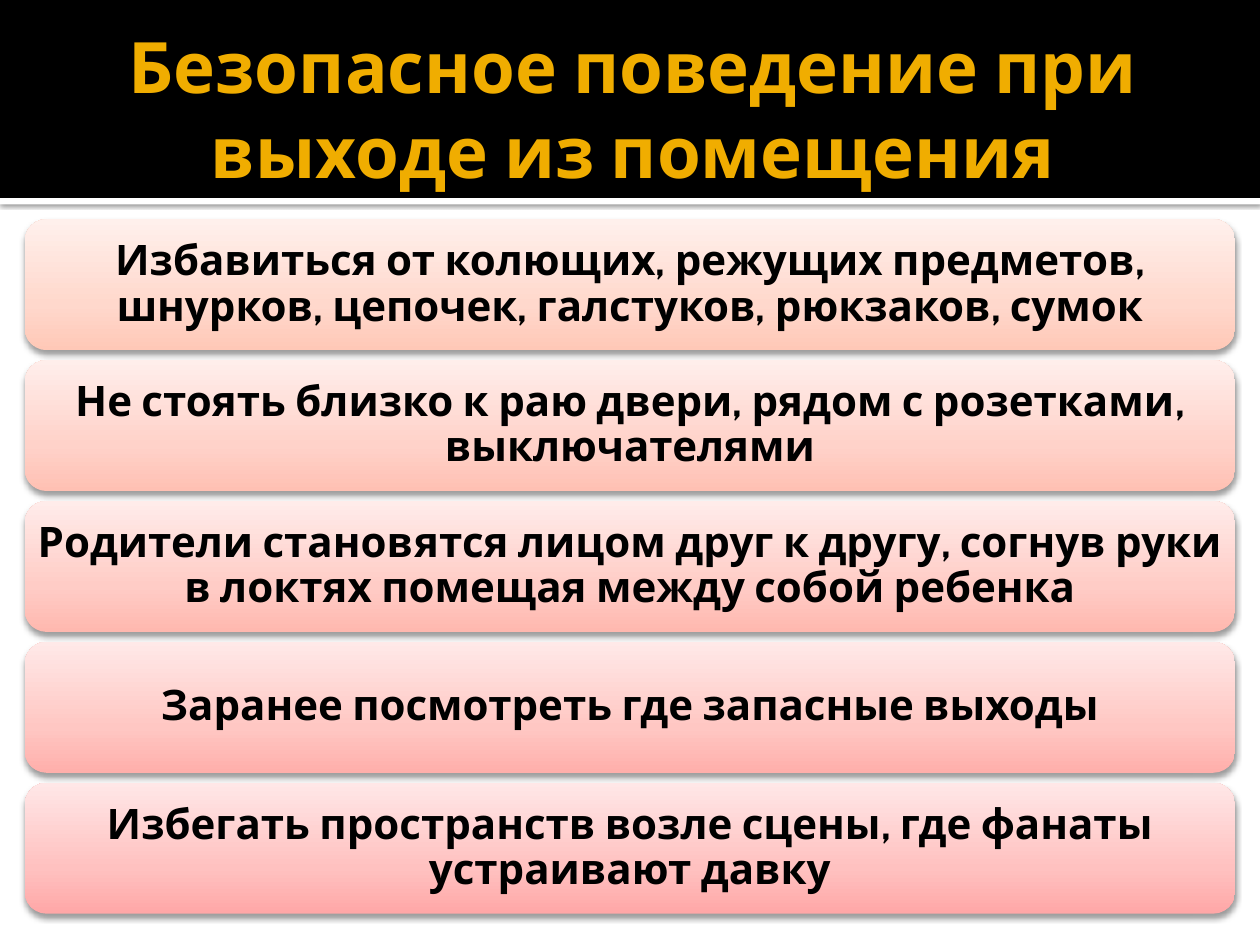
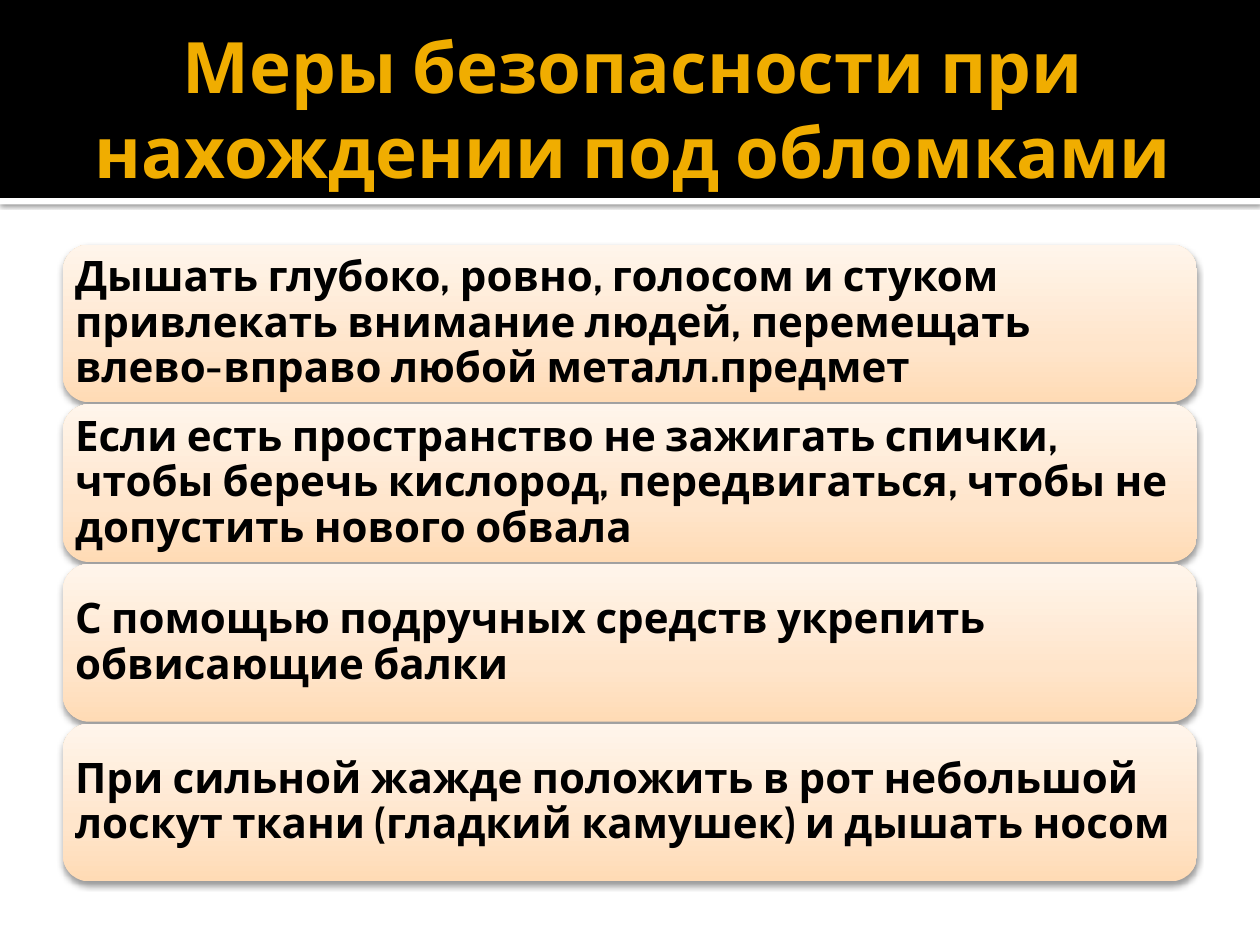
from copy import deepcopy

from lxml.etree import SubElement
from pptx import Presentation
from pptx.dml.color import RGBColor
from pptx.enum.shapes import MSO_SHAPE
from pptx.enum.text import MSO_ANCHOR, PP_ALIGN
from pptx.oxml.ns import qn
from pptx.util import Cm, Pt

BLACK = RGBColor(0x00, 0x00, 0x00)
WHITE = RGBColor(0xFF, 0xFF, 0xFF)
GOLD = RGBColor(0xF0, 0xAD, 0x00)
PEACH = (RGBColor(0xFF, 0xC8, 0xB7), RGBColor(0xFF, 0xD8, 0xCC), RGBColor(0xFF, 0xF0, 0xEC))
ROSE = (RGBColor(0xFF, 0xA7, 0xA7), RGBColor(0xFF, 0xC1, 0xC0), RGBColor(0xFF, 0xE7, 0xE7))
SAND = (RGBColor(0xFF, 0xDB, 0xB5), RGBColor(0xFF, 0xE5, 0xCB), RGBColor(0xFF, 0xF5, 0xEB))
STOPS = (0, 0.35, 1)
FONT = "Cabin"
WIDTH, HEIGHT = 25.4, 19.05
BAND_HEIGHT = 3.99

EXIT_RULES = [
    "Избавиться от колющих, режущих предметов, шнурков, цепочек, галстуков, рюкзаков, сумок",
    "Не стоять близко к раю двери, рядом с розетками, выключателями",
    "Родители становятся лицом друг к другу, согнув руки в локтях помещая между собой ребенка",
    "Заранее посмотреть где запасные выходы",
    "Избегать пространств возле сцены, где фанаты устраивают давку",
]
RUBBLE_RULES = [
    "Дышать глубоко, ровно, голосом и стуком привлекать внимание людей, "
    "перемещать влево-вправо любой металл.предмет",
    "Если есть пространство не зажигать спички, чтобы беречь кислород, "
    "передвигаться, чтобы не допустить нового обвала",
    "С помощью подручных средств укрепить обвисающие балки",
    "При сильной жажде положить в рот небольшой лоскут ткани (гладкий камушек) и дышать носом",
]


def write(sp, text, size=24, color=BLACK, align=PP_ALIGN.CENTER, spacing=None,
          insets=(0.25, 0.13, 0.13, 0.13)):
    tf = sp.text_frame
    tf.word_wrap = True
    tf.vertical_anchor = MSO_ANCHOR.MIDDLE
    tf.margin_left, tf.margin_top, tf.margin_right, tf.margin_bottom = map(Cm, insets)
    p = tf.paragraphs[0]
    p.alignment = align
    if spacing:
        p.line_spacing = spacing
    r = p.add_run()
    r.text = text
    r.font.name, r.font.size, r.font.bold = FONT, Pt(size), True
    r.font.color.rgb = color


def blend(start, end, t):
    return tuple(RGBColor(*(round(a + (b - a) * t) for a, b in zip(c, d)))
                 for c, d in zip(start, end))


class Deck:
    """Holds the shared style and the slide being built."""

    def __init__(self):
        self.prs = Presentation()
        self.prs.slide_width, self.prs.slide_height = Cm(WIDTH), Cm(HEIGHT)
        self.s = None

    def shape(self, kind, left, top, width, height):
        sp = self.s.shapes.add_shape(kind, Cm(left), Cm(top), Cm(width), Cm(height))
        sp.line.fill.background()
        sp.shadow.inherit = False
        return sp

    def band(self, top, height, color):
        sp = self.shape(MSO_SHAPE.RECTANGLE, 0, top, WIDTH, height)
        sp.fill.solid()
        sp.fill.fore_color.rgb = color
        return sp

    def shadow(self, sp, alpha, blur, dist):
        effects = sp._element.spPr.find(qn("a:effectLst"))
        outer = SubElement(effects, qn("a:outerShdw"), blurRad=str(Pt(blur)),
                           dist=str(Pt(dist)), dir="5400000", rotWithShape="0")
        color = SubElement(outer, qn("a:srgbClr"), val=str(BLACK))
        SubElement(color, qn("a:alpha"), val=str(alpha * 1000))

    def gradient(self, sp, colors):
        sp.fill.gradient()
        sp.fill.gradient_angle = 90
        stops = sp._element.spPr.find(qn("a:gradFill")).find(qn("a:gsLst"))
        stops.append(deepcopy(stops[0]))
        for stop, position, color in zip(sp.fill.gradient_stops, STOPS, colors):
            stop.position = position
            stop.color.rgb = color

    def slide(self, title, margin):
        self.s = self.prs.slides.add_slide(self.prs.slide_layouts[6])
        self.shadow(self.band(BAND_HEIGHT, 0.13, WHITE), 60, 2.5, 0.8)
        self.band(0, BAND_HEIGHT, BLACK)
        tb = self.s.shapes.add_textbox(Cm(margin), Cm(0.43), Cm(WIDTH - 2 * margin), Cm(3.48))
        write(tb, title, size=40.5, color=GOLD)

    def card(self, text, left, top, height, colors, align):
        sp = self.shape(MSO_SHAPE.ROUNDED_RECTANGLE, left, top, WIDTH - 2 * left, height)
        self.gradient(sp, colors)
        self.shadow(sp, 38, 3.5, 2)
        inset = round(0.25 - 0.05 * height, 2)
        write(sp, text, align=align, spacing=0.9, insets=[inset] * 4)

    def cards(self, texts, left, top, height, gap, start, end, align):
        for i, text in enumerate(texts):
            colors = blend(start, end, i / (len(texts) - 1))
            self.card(text, left, top + i * (height + gap), height, colors, align)


def main():
    deck = Deck()
    deck.slide("Безопасное поведение при выходе из помещения", margin=1.27)
    deck.cards(EXIT_RULES, left=0.5, top=4.42, height=2.64, gap=0.2,
               start=PEACH, end=ROSE, align=PP_ALIGN.CENTER)
    deck.slide("Меры безопасности при нахождении под обломками", margin=0.5)
    deck.cards(RUBBLE_RULES, left=1.27, top=4.93, height=3.18, gap=0.04,
               start=SAND, end=SAND, align=PP_ALIGN.LEFT)
    deck.prs.save("out.pptx")


if __name__ == "__main__":
    main()
